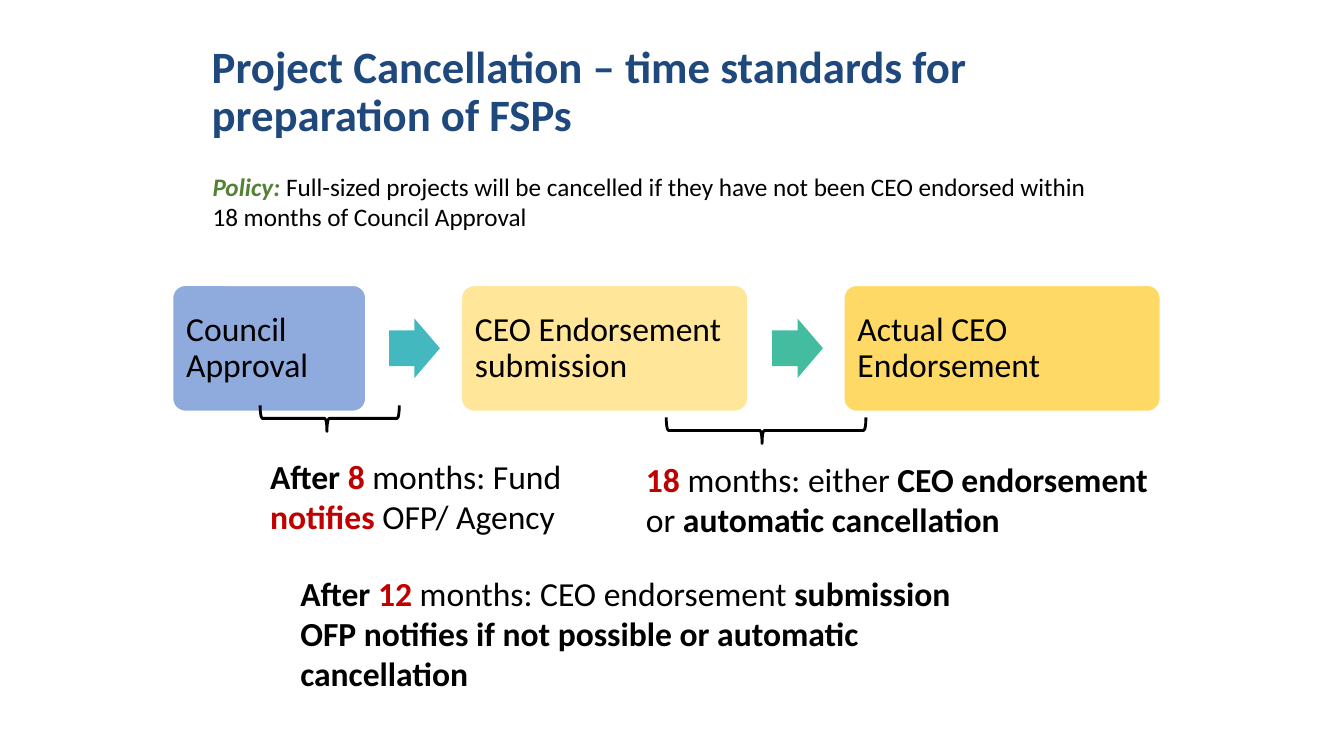
import pptx
import pptx.util
import pptx.dml.color
import pptx.enum.shapes
import pptx.enum.text

Pt = pptx.util.Pt
SHAPE = pptx.enum.shapes.MSO_SHAPE
ANCHOR = pptx.enum.text.MSO_ANCHOR
COLORS = {
    "title": "1F497D", "text": "000000", "policy": "548235", "alert": "C00000",
    "approval": "8FAADC", "submission": "FFE699", "endorsement": "FFD966",
    "teal": "43B8BF", "green": "43BCA0", "border": "FFFFFF",
}


class Deck:
    """Holds the text style and the current slide, and draws its elements."""

    def __init__(self, prs, font="Calibri", size=24):
        self.font, self.size = font, size
        self.s = prs.slides.add_slide(prs.slide_layouts[5])

    def color(self, name):
        return pptx.dml.color.RGBColor.from_string(COLORS[name])

    def fill_text(self, tf, paragraphs, size=None, spacing=None, anchor=ANCHOR.TOP):
        tf.word_wrap = True
        tf.auto_size = pptx.enum.text.MSO_AUTO_SIZE.NONE
        tf.vertical_anchor = anchor
        for i, runs in enumerate(paragraphs):
            p = tf.add_paragraph() if i else tf.paragraphs[0]
            p.alignment = pptx.enum.text.PP_ALIGN.LEFT
            p.line_spacing = spacing
            for text, color, style in runs:
                r = p.add_run()
                r.text = text
                r.font.name = self.font
                r.font.size = Pt(size or self.size)
                r.font.color.rgb = self.color(color)
                r.font.bold = "b" in style
                r.font.italic = "i" in style

    def title(self, text, x, y, w, h):
        sp = self.s.shapes.title
        sp.left, sp.top, sp.width, sp.height = Pt(x), Pt(y), Pt(w), Pt(h)
        self.fill_text(sp.text_frame, [[(text, "title", "b")]], 32, 0.9, ANCHOR.MIDDLE)

    def text(self, paragraphs, x, y, w, h, size=None):
        sp = self.s.shapes.add_textbox(Pt(x), Pt(y), Pt(w), Pt(h))
        self.fill_text(sp.text_frame, paragraphs, size)

    def shape(self, kind, x, y, w, h, adjustments, fill=None, line=None, weight=1):
        sp = self.s.shapes.add_shape(kind, Pt(x), Pt(y), Pt(w), Pt(h))
        sp.shadow.inherit = False
        for i, value in enumerate(adjustments):
            sp.adjustments[i] = value
        if fill:
            sp.fill.solid()
            sp.fill.fore_color.rgb = self.color(fill)
        else:
            sp.fill.background()
        if line:
            sp.line.color.rgb = self.color(line)
            sp.line.width = Pt(weight)
        else:
            sp.line.fill.background()
        return sp

    def step(self, text, x, w, fill):
        sp = self.shape(SHAPE.ROUNDED_RECTANGLE, x, 203.8, w, 90, [0.1], fill, "border")
        tf = sp.text_frame
        tf.margin_left = tf.margin_right = tf.margin_top = tf.margin_bottom = Pt(7.2)
        self.fill_text(tf, [[(text, "text", "")]], spacing=0.9, anchor=ANCHOR.MIDDLE)

    def arrow(self, x, fill):
        self.shape(SHAPE.RIGHT_ARROW, x, 227.5, 36.3, 42.5, [0.6, 0.5], fill)

    def brace(self, x, y, span, depth=18.7):
        left, top = x + (span - depth) / 2, y - (span - depth) / 2
        sp = self.shape(SHAPE.LEFT_BRACE, left, top, depth, span,
                        [0.08, 0.48], line="text", weight=2)
        sp.rotation = 270


def main():
    prs = pptx.Presentation()
    prs.slide_width, prs.slide_height = Pt(960), Pt(540)
    d = Deck(prs)

    d.title("Project Cancellation – time standards for preparation of FSPs",
            144, 14.4, 620.6, 104.4)
    d.text([[("Policy: ", "policy", "bi"),
             ("Full-sized projects will be cancelled if they have not been CEO "
              "endorsed within 18 months of Council Approval", "text", "")]],
           144.7, 118.8, 641.5, 51, size=18)

    for text, x, w, fill in [
        ("Council Approval", 123.3, 138, "approval"),
        ("CEO Endorsement submission", 329.6, 204.5, "submission"),
        ("Actual CEO Endorsement", 602.8, 226, "endorsement"),
    ]:
        d.step(text, x, w, fill)
    for x, fill in [(277.9, "teal"), (551.5, "green")]:
        d.arrow(x, fill)
    for x, y, span in [(185.8, 289.5, 99.4), (475.9, 298.1, 142.6)]:
        d.brace(x, y, span)

    d.text([[("After", "text", "b"), (" 8 ", "alert", "b"),
             ("months: Fund ", "text", ""), ("notifies", "alert", "b"),
             (" OFP/ Agency", "text", "")]], 185.8, 321.8, 239.8, 65.5)
    d.text([[("After ", "text", "b"), ("12", "alert", "b"),
             (" months: CEO endorsement ", "text", ""), ("submission", "text", "b")],
            [("OFP notifies if not possible or automatic", "text", "b")],
            [("cancellation", "text", "b")]], 207.4, 405.4, 500.4, 94.3)
    d.text([[("18 ", "alert", "b"), ("months: either ", "text", ""),
             ("CEO endorsement ", "text", "b"), ("or ", "text", ""),
             ("automatic cancellation", "text", "b")]], 454.3, 324, 374.4, 65.5)

    prs.save("out.pptx")


if __name__ == "__main__":
    main()
